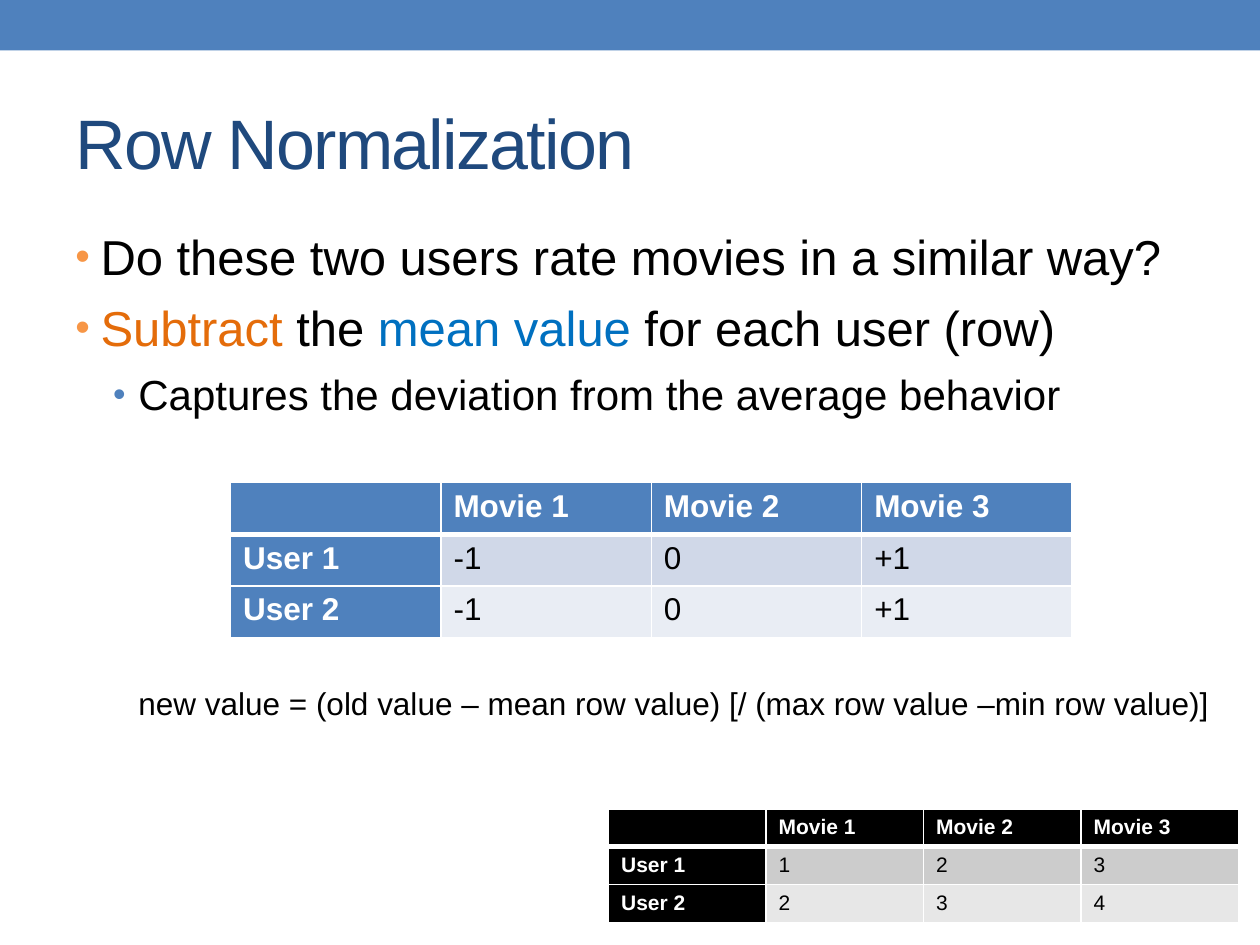
from lxml import etree
from pptx import Presentation
from pptx.dml.color import RGBColor
from pptx.enum.shapes import MSO_SHAPE
from pptx.enum.text import MSO_ANCHOR
from pptx.oxml.ns import qn
from pptx.util import Inches, Pt

RECTANGLE, MIDDLE, TOP = MSO_SHAPE.RECTANGLE, MSO_ANCHOR.MIDDLE, MSO_ANCHOR.TOP
FONT = "Arial"
COLORS = {"blue": "4F81BD", "navy": "1F497D", "black": "000000", "white": "FFFFFF",
          "orange": "F79646", "rust": "E46C0A", "azure": "0070C0",
          "blue_band": "D0D8E8", "blue_pale": "E9EDF4",
          "gray_band": "CCCCCC", "gray_pale": "E7E7E7"}

# Content
TITLE = "Row Normalization"
BULLETS = [  # level, size, bullet colour, spans
    (0, 28, "orange", [("Do these two users rate movies in a similar way?", "black")]),
    (0, 28, "orange", [("Subtract ", "rust"), ("the ", "black"),
                       ("mean value ", "azure"), ("for each user (row)", "black")]),
    (1, 24, "blue", [("Captures the deviation from the average behavior", "black")]),
]
FORMULA = "new value = (old value – mean row value) [/ (max row value –min row value)]"
HEADER = ["", "Movie 1", "Movie 2", "Movie 3"]
TABLES = [
    {"left": 1.83, "top": 3.83, "column": 1.67, "row": 0.41, "size": 18,
     "head": "blue", "bands": ["blue_band", "blue_pale"],
     "rows": [HEADER, ["User 1", "-1", "0", "+1"], ["User 2", "-1", "0", "+1"]]},
    {"left": 4.83, "top": 6.42, "column": 1.25, "row": 0.29, "size": 12,
     "head": "black", "bands": ["gray_band", "gray_pale"],
     "rows": [HEADER, ["User 1", "1", "2", "3"], ["User 2", "2", "3", "4"]]},
]


def color(name):
    return RGBColor.from_string(COLORS[name])


def add_span(para, text, size, name, bold=False):
    span = para.add_run()
    span.text = text
    span.font.name, span.font.size, span.font.bold = FONT, Pt(size), bold
    span.font.color.rgb = color(name)
    return span


def add_text_frame(page, left, top, width, height, anchor=TOP, wrap=True):
    box = page.shapes.add_textbox(*map(Inches, (left, top, width, height)))
    frame = box.text_frame
    frame.word_wrap, frame.vertical_anchor = wrap, anchor
    return frame


def set_bullet(para, level, name):
    props = para._p.get_or_add_pPr()
    props.set("marL", str(Inches(0.2 + 0.3 * level)))
    props.set("indent", str(Inches(-0.2)))
    shade = etree.SubElement(props, qn("a:buClr"))
    etree.SubElement(shade, qn("a:srgbClr"), val=COLORS[name])
    etree.SubElement(props, qn("a:buSzPct"), val="85000")
    etree.SubElement(props, qn("a:buFont"), typeface=FONT)
    etree.SubElement(props, qn("a:buChar"), char="•")


def set_borders(cell, top, bottom):
    props = cell._tc.get_or_add_tcPr()
    sides = {"a:lnL": 1, "a:lnR": 1, "a:lnT": top, "a:lnB": bottom}
    for index, (side, width) in enumerate(sides.items()):
        line = etree.Element(qn(side), w=str(Pt(width)))
        fill = etree.SubElement(line, qn("a:solidFill"))
        etree.SubElement(fill, qn("a:srgbClr"), val=COLORS["white"])
        props.insert(index, line)


def add_ratings(page, data):
    rows, columns = len(data["rows"]), len(HEADER)
    table = page.shapes.add_table(
        rows, columns, Inches(data["left"]), Inches(data["top"]),
        Inches(data["column"] * columns), Inches(data["row"] * rows)).table
    for column in table.columns:
        column.width = Inches(data["column"])
    for r, values in enumerate(data["rows"]):
        table.rows[r].height = Inches(data["row"])
        for c, value in enumerate(values):
            cell = table.cell(r, c)
            is_head = r == 0 or c == 0
            cell.fill.solid()
            cell.fill.fore_color.rgb = color(data["head"] if is_head else data["bands"][r - 1])
            set_borders(cell, 3 if r == 1 else 1, 3 if r == 0 else 1)
            para = cell.text_frame.paragraphs[0]
            if value:
                add_span(para, value, data["size"], "white" if is_head else "black", is_head)
            else:  # keeps the empty cell as low as its row
                etree.SubElement(para._p, qn("a:endParaRPr"), sz=str(data["size"] * 100))


def main():
    deck = Presentation()
    deck.slide_width, deck.slide_height = Inches(10), Inches(7.5)
    page = deck.slides.add_slide(deck.slide_layouts[6])

    # Top band
    band = page.shapes.add_shape(RECTANGLE, 0, 0, deck.slide_width, Inches(0.4))
    band.shadow.inherit = False
    band.fill.solid()
    band.fill.fore_color.rgb = color("blue")
    band.line.fill.background()

    # Title
    frame = add_text_frame(page, 0.5, 0.58, 9, 1.08, MIDDLE)
    span = add_span(frame.paragraphs[0], TITLE, 40, "navy")
    span.font._element.set("spc", "-100")

    # Bullets
    frame = add_text_frame(page, 0.5, 1.75, 9, 5.33)
    for index, (level, size, bullet, spans) in enumerate(BULLETS):
        para = frame.add_paragraph() if index else frame.paragraphs[0]
        para.level, para.space_before = level, Pt(7)
        set_bullet(para, level, bullet)
        for text, name in spans:
            add_span(para, text, size, name)

    # Tables and formula
    for data in TABLES:
        add_ratings(page, data)
    frame = add_text_frame(page, 1, 5.38, 8.71, 0.4, wrap=False)
    add_span(frame.paragraphs[0], FORMULA, 18, "black")

    deck.save("out.pptx")


if __name__ == "__main__":
    main()
